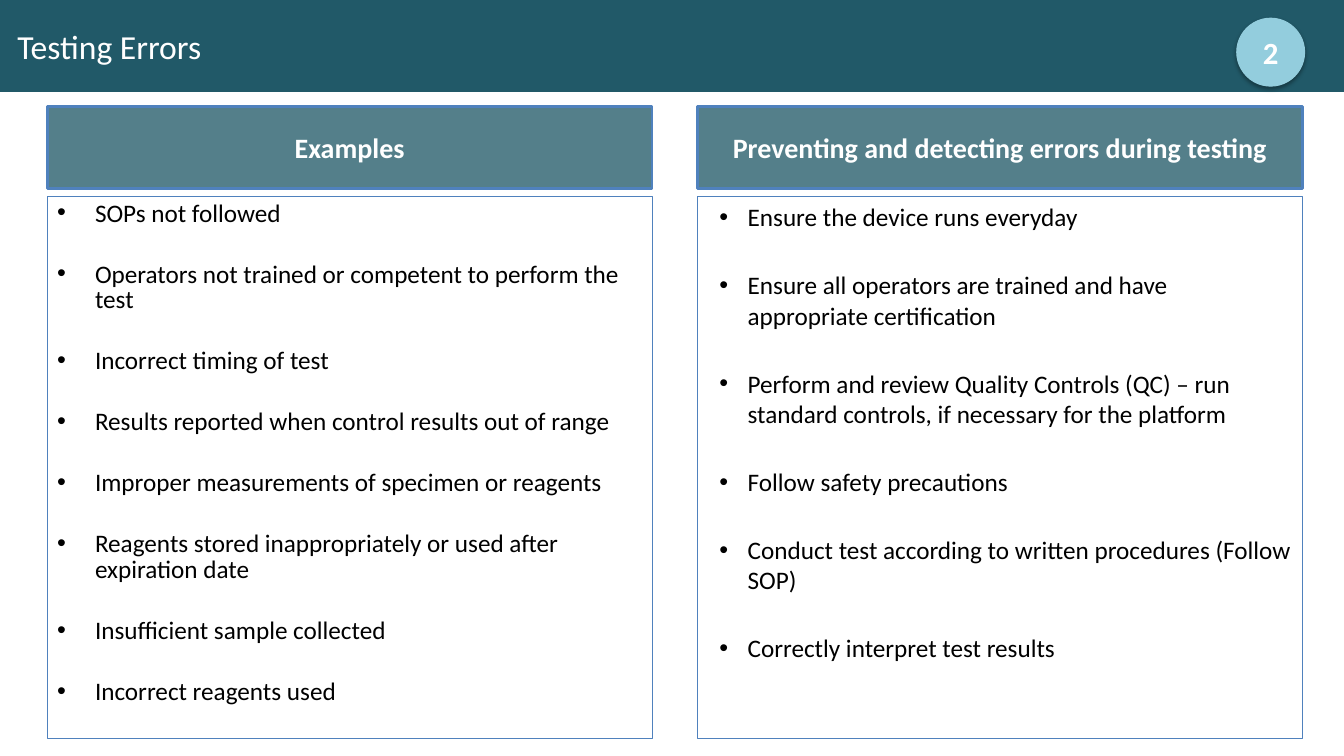
from pptx import Presentation
from pptx.dml.color import RGBColor
from pptx.enum.shapes import MSO_SHAPE
from pptx.enum.text import MSO_ANCHOR, PP_ALIGN
from pptx.oxml import parse_xml
from pptx.oxml.ns import nsdecls
from pptx.util import Pt

# Content
TITLE = "Testing Errors"
NUMBER = "2"
COLUMNS = [
    {
        "head": "Examples",
        "items": [
            "SOPs not followed",
            "Operators not trained or competent to perform the test",
            "Incorrect timing of test",
            "Results reported when control results out of range",
            "Improper measurements of specimen or reagents",
            "Reagents stored inappropriately or used after expiration date",
            "Insufficient sample collected",
            "Incorrect reagents used",
        ],
        "indent": 27, "hang": 27,
        "format": {"line_spacing": 0.85, "space_after": Pt(25.2)},
    },
    {
        "head": "Preventing and detecting errors during testing",
        "items": [
            "Ensure the device runs everyday",
            "Ensure all operators are trained and have appropriate certification",
            "Perform and review Quality Controls (QC) – run standard controls, "
            "if necessary for the platform",
            "Follow safety precautions",
            "Conduct test according to written procedures (Follow SOP)",
            "Correctly interpret test results",
        ],
        "indent": 28.8, "hang": 20.2,
        "format": {"space_after": Pt(27)},
    },
]

# Sizes and colours
WIDE, HIGH = 960, 540
LEFT, STEP, WIDTH = 33.8, 464.4, 432
HEAD_TOP, HEAD_HIGH = 76.3, 58.3
BODY_TOP, BODY_HIGH = 140.4, 387.4
TEAL, BLUE, SKY = "215968", "4F81BD", "93CDDD"
WHITE, BLACK = "FFFFFF", "000000"


def color(target, code):
    target.rgb = RGBColor.from_string(code)


def assign(target, values):
    for name, value in values.items():
        setattr(target, name, value)


def add_box(place, fill=None, line=None, weight=0.75, kind=MSO_SHAPE.RECTANGLE):
    shape = slide.shapes.add_shape(kind, *map(Pt, place))
    shape.shadow.inherit = False
    if fill:
        shape.fill.solid()
        color(shape.fill.fore_color, fill)
    else:
        shape.fill.background()
    if line:
        color(shape.line.color, line)
        shape.line.width = Pt(weight)
    else:
        shape.line.fill.background()
    return shape


def write(shape, lines, size, code, bold=False, align=PP_ALIGN.CENTER,
          anchor=MSO_ANCHOR.MIDDLE, format=None):
    frame = shape.text_frame
    assign(frame, {"word_wrap": True, "vertical_anchor": anchor})
    for index, line in enumerate(lines):
        para = frame.add_paragraph() if index else frame.paragraphs[0]
        assign(para, {"alignment": align, **(format or {})})
        run = para.add_run()
        run.text = line
        assign(run.font, {"name": "Calibri", "size": Pt(size), "bold": bold})
        color(run.font.color, code)


def add_bullets(shape, indent, hang):
    for para in shape.text_frame.paragraphs:
        props = para._p.get_or_add_pPr()
        props.set("marL", str(Pt(indent)))
        props.set("indent", str(-Pt(hang)))
        props.append(parse_xml(f'<a:buFont {nsdecls("a")} typeface="Arial"/>'))
        props.append(parse_xml(f'<a:buChar {nsdecls("a")} char="•"/>'))


def fade(shape, percent):
    tint = shape._element.spPr.find(".//{*}solidFill/{*}srgbClr")
    tint.append(parse_xml(f'<a:alpha {nsdecls("a")} val="{percent * 1000}"/>'))


def add_shadow(shape, blur, drop, percent):
    effects = shape._element.spPr.find("{*}effectLst")
    effects.append(parse_xml(
        f'<a:outerShdw {nsdecls("a")} blurRad="{Pt(blur)}" dist="{Pt(drop)}" '
        f'dir="5400000" rotWithShape="0"><a:srgbClr val="{BLACK}">'
        f'<a:alpha val="{percent * 1000}"/></a:srgbClr></a:outerShdw>'))


deck = Presentation()
assign(deck, {"slide_width": Pt(WIDE), "slide_height": Pt(HIGH)})
slide = deck.slides.add_slide(deck.slide_layouts[6])

# Title band
band = add_box((0, 0, WIDE, 65.7), TEAL)
band.text_frame.margin_left = Pt(12.4)
write(band, [TITLE], 24, WHITE, align=PP_ALIGN.LEFT)

# Two columns: heading above a bulleted box
for index, column in enumerate(COLUMNS):
    left = LEFT + index * STEP
    body = add_box((left, BODY_TOP, WIDTH, BODY_HIGH), line=BLUE)
    write(body, column["items"], 18, BLACK, align=PP_ALIGN.LEFT,
          anchor=MSO_ANCHOR.TOP, format=column["format"])
    add_bullets(body, column["indent"], column["hang"])
    head = add_box((left, HEAD_TOP, WIDTH, HEAD_HIGH), TEAL, BLUE, 2)
    fade(head, 77)
    write(head, [column["head"]], 20, WHITE, bold=True)

# Number badge
badge = add_box((883.4, 13, 48.5, 48.5), SKY, SKY, kind=MSO_SHAPE.OVAL)
add_shadow(badge, 3.1, 1.8, 35)
write(badge, [NUMBER], 22, WHITE, bold=True)

deck.save("out.pptx")
